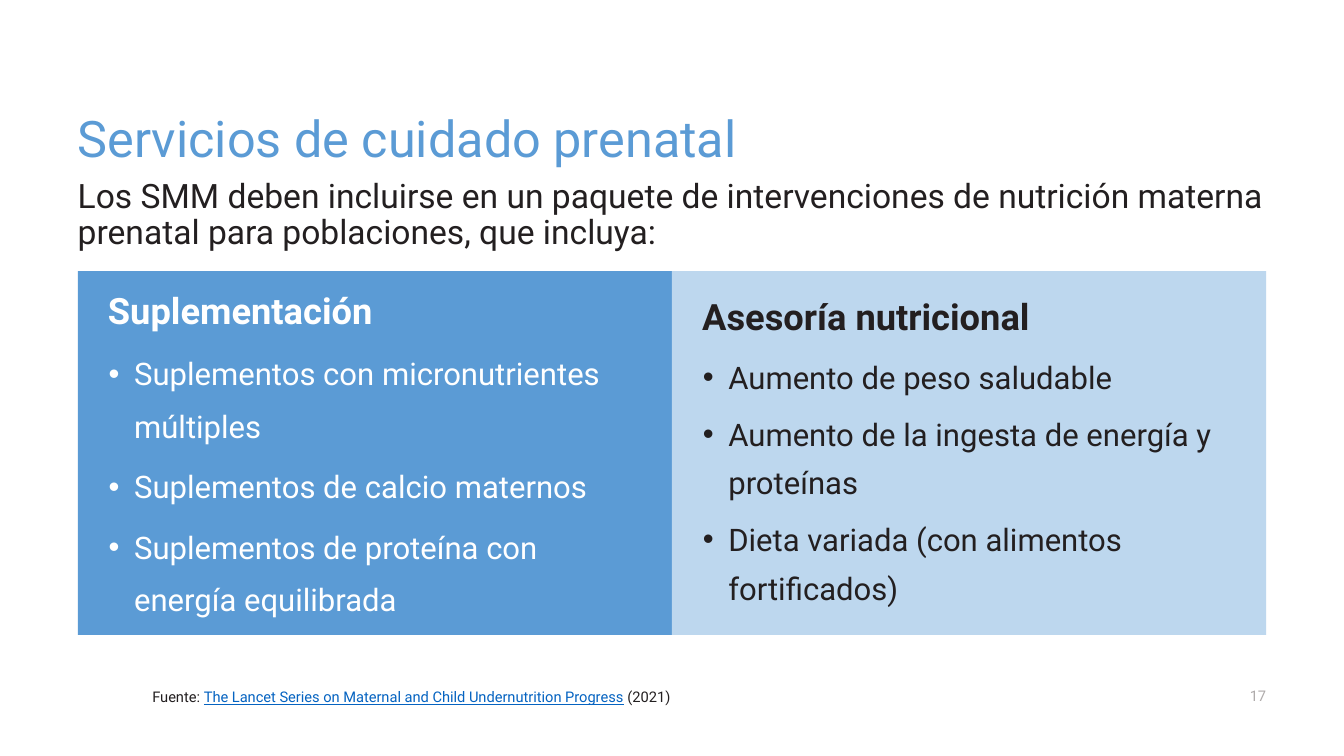
from lxml import etree
from pptx import Presentation
from pptx.dml.color import RGBColor
from pptx.enum.shapes import MSO_SHAPE
from pptx.enum.text import MSO_ANCHOR, PP_ALIGN
from pptx.oxml.ns import qn
from pptx.util import Cm, Pt

RECTANGLE = MSO_SHAPE.RECTANGLE
TOP, MIDDLE, BOTTOM = MSO_ANCHOR.TOP, MSO_ANCHOR.MIDDLE, MSO_ANCHOR.BOTTOM
LEFT, RIGHT = PP_ALIGN.LEFT, PP_ALIGN.RIGHT

BLUE = RGBColor(0x5B, 0x9B, 0xD5)
PALE_BLUE = RGBColor(0xBD, 0xD7, 0xEE)
LINK_BLUE = RGBColor(0x05, 0x63, 0xC1)
INK = RGBColor(0x23, 0x1F, 0x20)
GRAY = RGBColor(0xAF, 0xAB, 0xAB)
WHITE = RGBColor(0xFF, 0xFF, 0xFF)

FONT = "Roboto"
MARGIN = 1.96
CONTENT_WIDTH = 29.95
PANEL_WIDTH = CONTENT_WIDTH / 2
PANEL_TOP, PANEL_HEIGHT = 6.83, 9.17
PANEL_INSET = 0.76
FOOTER_TOP, FOOTER_HEIGHT = 17.02, 1.02

SUPPLEMENTS = [
    "Suplementos con micronutrientes múltiples",
    "Suplementos de calcio maternos",
    "Suplementos de proteína con energía equilibrada",
]
COUNSELING = [
    "Aumento de peso saludable",
    "Aumento de la ingesta de energía y proteínas",
    "Dieta variada (con alimentos fortificados)",
]


def set_frame(frame, inset, anchor):
    frame.word_wrap = True
    frame.vertical_anchor = anchor
    frame.margin_left = frame.margin_right = Cm(inset)
    frame.margin_top = frame.margin_bottom = Cm(inset)


def style_run(run, size, color, bold=False, underline=False):
    run.font.name = FONT
    run.font.size = Pt(size)
    run.font.color.rgb = color
    run.font.bold = bold
    run.font.underline = underline


def add_label(slide, box, text, size, color, anchor=MIDDLE, align=LEFT, spacing=0.9):
    """Add one line or block of text; box is left, top, width, height in cm."""
    frame = slide.shapes.add_textbox(*map(Cm, box)).text_frame
    set_frame(frame, 0, anchor)
    frame.text = text
    paragraph = frame.paragraphs[0]
    paragraph.alignment = align
    paragraph.line_spacing = spacing
    style_run(paragraph.runs[0], size, color)
    return paragraph


def add_bullet(paragraph):
    properties = paragraph._p.get_or_add_pPr()
    properties.set("marL", str(Cm(0.66)))
    properties.set("indent", str(Cm(-0.64)))
    etree.SubElement(properties, qn("a:buFont"), typeface="Arial")
    etree.SubElement(properties, qn("a:buChar"), char="•")


def add_panel(slide, column, fill, color, heading, heading_spacing, items, item_spacing):
    panel = slide.shapes.add_shape(
        RECTANGLE, Cm(MARGIN + column * PANEL_WIDTH), Cm(PANEL_TOP),
        Cm(PANEL_WIDTH), Cm(PANEL_HEIGHT))
    panel.shadow.inherit = False
    panel.fill.solid()
    panel.fill.fore_color.rgb = fill
    panel.line.fill.background()

    frame = panel.text_frame
    set_frame(frame, PANEL_INSET, MIDDLE)
    frame.text = "\n".join([heading, *items])
    title, *bullets = frame.paragraphs
    title.alignment = LEFT
    title.line_spacing = heading_spacing
    style_run(title.runs[0], 25.9, color, bold=True)
    for bullet in bullets:
        add_bullet(bullet)
        bullet.alignment = LEFT
        bullet.line_spacing = item_spacing
        bullet.space_before = Pt(6)
        style_run(bullet.runs[0], 22.2, color)


def add_source(slide):
    source = add_label(slide, (3.84, FOOTER_TOP, 16.41, FOOTER_HEIGHT),
                       "Fuente: ", 10.5, INK, spacing=1.1)
    for text, color, underline in [
        ("The Lancet Series on Maternal and Child Undernutrition Progress", LINK_BLUE, True),
        (" (2021)", INK, False),
    ]:
        run = source.add_run()
        run.text = text
        style_run(run, 10.5, color, underline=underline)


def main():
    deck = Presentation()
    deck.slide_width, deck.slide_height = Cm(33.87), Cm(19.05)
    slide = deck.slides.add_slide(deck.slide_layouts[6])

    add_label(slide, (MARGIN, 0.81, CONTENT_WIDTH, 3.43),
              "Servicios de cuidado prenatal", 36, BLUE, anchor=BOTTOM)
    add_label(slide, (MARGIN, 4.52, CONTENT_WIDTH, 2.01),
              "Los SMM deben incluirse en un paquete de intervenciones de nutrición "
              "materna prenatal para poblaciones, que incluya:", 24, INK, anchor=TOP)
    add_panel(slide, 0, BLUE, WHITE, "Suplementación", 1.0, SUPPLEMENTS, 1.4)
    add_panel(slide, 1, PALE_BLUE, INK, "Asesoría nutricional", 0.9, COUNSELING, 1.3)
    add_source(slide)
    add_label(slide, (31.04, FOOTER_TOP, 0.87, FOOTER_HEIGHT),
              "17", 10.5, GRAY, align=RIGHT, spacing=1.0)

    deck.save("out.pptx")


if __name__ == "__main__":
    main()
